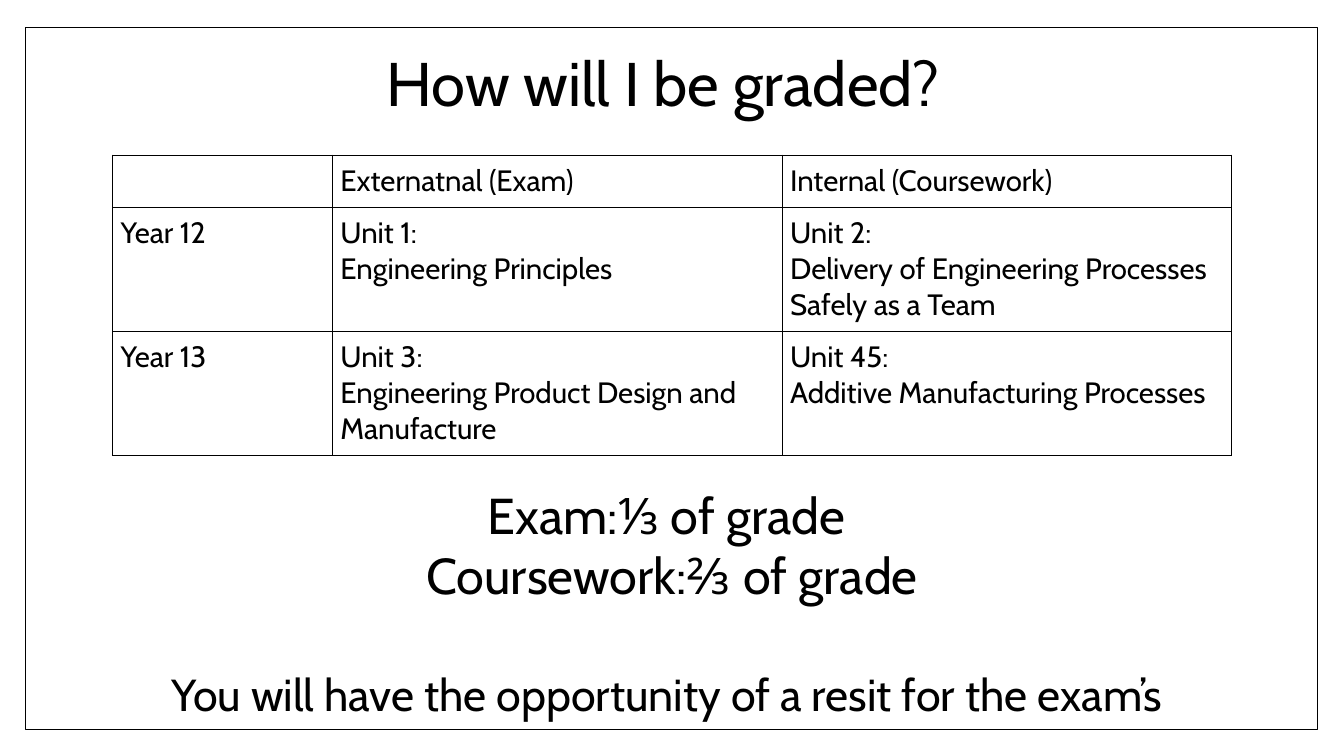
import lxml.etree
import pptx
import pptx.dml.color
import pptx.enum.shapes
import pptx.enum.text
import pptx.oxml.ns
import pptx.util
from dataclasses import dataclass

Cm = pptx.util.Cm
Pt = pptx.util.Pt
CENTER = pptx.enum.text.PP_ALIGN.CENTER


@dataclass(frozen=True)
class Theme:
    font: str = "Cabin"
    ink: str = "000000"
    paper: str = "FFFFFF"
    title_size: int = 44
    share_size: int = 36
    resit_size: int = 32
    table_size: int = 21
    frame_line: float = 1
    table_line: float = 0.75


THEME = Theme()

TITLE = "How will I be graded? "
UNITS = [
    [[], ["Externatnal (Exam)"], ["Internal (Coursework) "]],
    [["Year 12"],
     ["Unit 1: ", "Engineering Principles "],
     ["Unit 2:", "Delivery of Engineering Processes Safely as a Team"]],
    [["Year 13 "],
     ["Unit 3: ", "Engineering Product Design and Manufacture"],
     ["Unit 45: ", "Additive Manufacturing Processes "]],
]
# text, size, space before in points
GRADING = [
    ("Exam:⅓ of grade ", THEME.share_size, 0),
    ("Coursework:⅔ of grade", THEME.share_size, 0),
    ("You will have the opportunity of a resit for the exam’s\u00a0", THEME.resit_size, 44),
]

SLIDE_SIZE = (Cm(33.87), Cm(19.05))
FRAME_BOX = (Cm(0.64), Cm(0.69), Cm(32.56), Cm(17.7))
TITLE_BOX = (Cm(3.18), Cm(1.22), Cm(27.43), Cm(3.76))
CONTENT_LEFT = Cm(2.84)
TABLE_TOP = Cm(3.91)
COLUMN_WIDTHS = (Cm(5.54), Cm(11.33), Cm(11.33))
ROW_HEIGHTS = (Cm(1.32), Cm(3.12), Cm(3.12))
CELL_MARGIN = Cm(0.2)
GRADING_TOP, GRADING_HEIGHT = Cm(12.07), Cm(6.6)


def color(value):
    return pptx.dml.color.RGBColor.from_string(value)


def write_lines(text_frame, lines, alignment=None):
    """Write (text, size, space before) lines, one paragraph each."""
    text_frame.word_wrap = True
    for index, (text, size, space_before) in enumerate(lines):
        paragraph = text_frame.add_paragraph() if index else text_frame.paragraphs[0]
        paragraph.alignment = alignment
        if space_before:
            paragraph.space_before = Pt(space_before)
        run = paragraph.add_run()
        run.text = text
        run.font.name = THEME.font
        run.font.size = Pt(size)
        run.font.color.rgb = color(THEME.ink)


def add_frame(slide):
    frame = slide.shapes.add_shape(pptx.enum.shapes.MSO_SHAPE.RECTANGLE, *FRAME_BOX)
    frame.shadow.inherit = False
    frame.fill.solid()
    frame.fill.fore_color.rgb = color(THEME.paper)
    frame.line.color.rgb = color(THEME.ink)
    frame.line.width = Pt(THEME.frame_line)


def draw_borders(cell):
    qn = pptx.oxml.ns.qn
    properties = cell._tc.get_or_add_tcPr()
    for side in ("a:lnL", "a:lnR", "a:lnT", "a:lnB"):
        line = lxml.etree.SubElement(properties, qn(side), w=str(Pt(THEME.table_line)))
        fill = lxml.etree.SubElement(line, qn("a:solidFill"))
        lxml.etree.SubElement(fill, qn("a:srgbClr"), val=THEME.ink)


def add_units_table(slide):
    table = slide.shapes.add_table(
        len(ROW_HEIGHTS), len(COLUMN_WIDTHS), CONTENT_LEFT, TABLE_TOP,
        sum(COLUMN_WIDTHS), sum(ROW_HEIGHTS)).table
    table.first_row = table.horz_banding = False
    for column, width in zip(table.columns, COLUMN_WIDTHS):
        column.width = width
    for row, height, contents in zip(table.rows, ROW_HEIGHTS, UNITS):
        row.height = height
        for cell, texts in zip(row.cells, contents):
            cell.margin_left = cell.margin_right = CELL_MARGIN
            cell.margin_top = cell.margin_bottom = CELL_MARGIN
            draw_borders(cell)
            cell.fill.background()
            write_lines(cell.text_frame, [(text, THEME.table_size, 0) for text in texts])


def main():
    presentation = pptx.Presentation()
    presentation.slide_width, presentation.slide_height = SLIDE_SIZE
    slide = presentation.slides.add_slide(presentation.slide_layouts[6])

    add_frame(slide)
    add_units_table(slide)

    grading = slide.shapes.add_textbox(
        CONTENT_LEFT, GRADING_TOP, sum(COLUMN_WIDTHS), GRADING_HEIGHT)
    write_lines(grading.text_frame, GRADING, CENTER)

    title = slide.shapes.add_textbox(*TITLE_BOX)
    write_lines(title.text_frame, [(TITLE, THEME.title_size, 0)], CENTER)
    title.text_frame.paragraphs[0].line_spacing = 0.9

    presentation.save("out.pptx")


if __name__ == "__main__":
    main()
